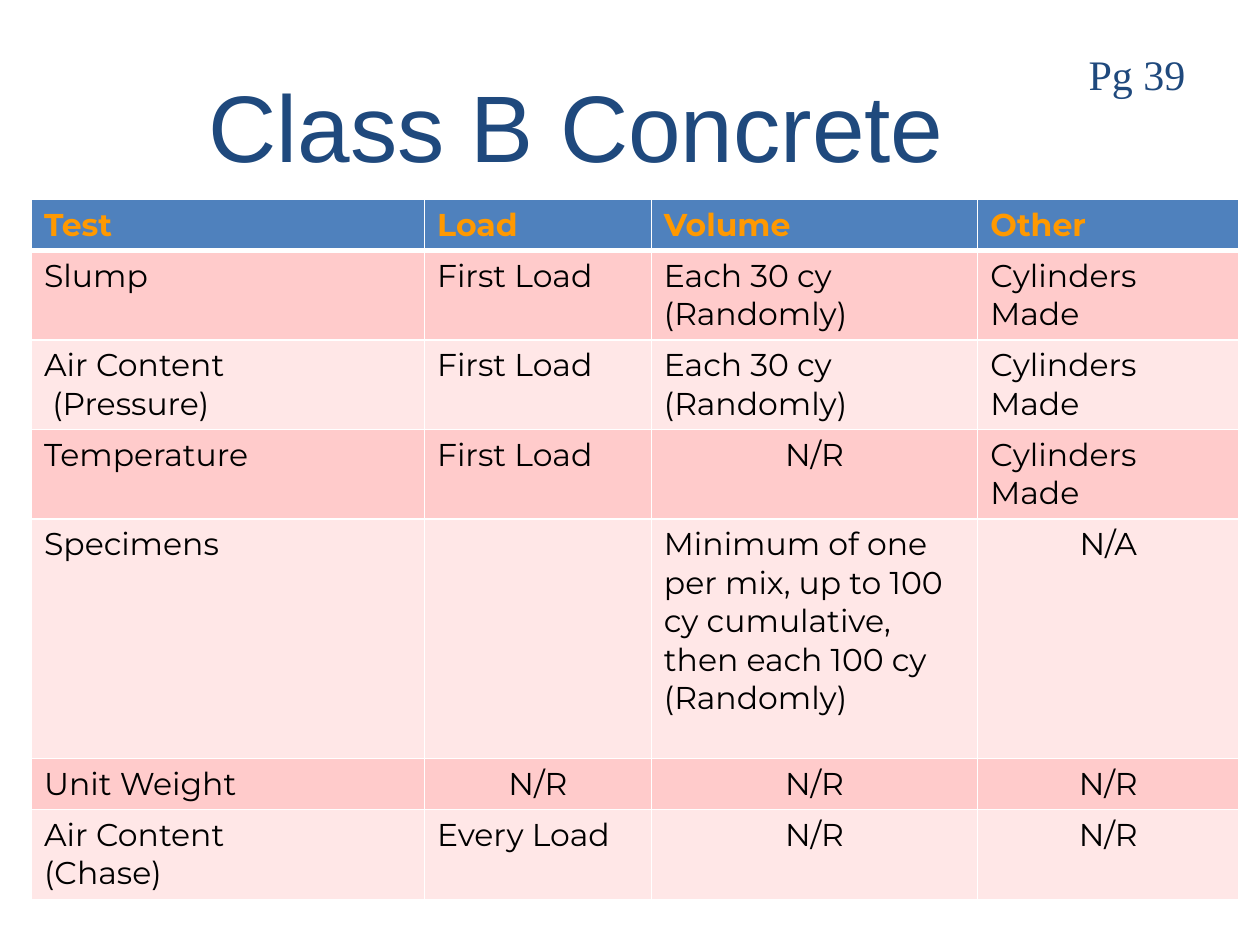
from dataclasses import dataclass

from lxml import etree
from pptx import Presentation
from pptx.dml.color import RGBColor
from pptx.enum.text import MSO_ANCHOR, MSO_AUTO_SIZE, PP_ALIGN
from pptx.oxml.ns import qn
from pptx.util import Pt

LEFT, CENTER = PP_ALIGN.LEFT, PP_ALIGN.CENTER
MIDDLE = MSO_ANCHOR.MIDDLE
NO_FIT = MSO_AUTO_SIZE.NONE
TITLE_ONLY = 5


@dataclass(frozen=True)
class Theme:
    navy: str = "1F497D"
    blue: str = "4F81BD"
    orange: str = "FF9900"
    black: str = "000000"
    white: str = "FFFFFF"
    bands: tuple = ("FFCBCB", "FFE7E7")
    title: tuple = ("Arial", 54)
    page: tuple = ("Times New Roman", 24)
    cell: tuple = ("Montserrat", 18)


THEME = Theme()

COLS = (224.6, 129.6, 186.5, 149.3)
HEAD = ("Test", "Load", "Volume", "Other")
# Row height, then the four cell texts
ROWS = (
    (50.4, "Slump", "First Load", "Each 30 cy (Randomly)", "Cylinders Made"),
    (50.4, "Air Content\n (Pressure)", "First Load", "Each 30 cy (Randomly)",
     "Cylinders Made"),
    (50.4, "Temperature", "First Load", "N/R", "Cylinders Made"),
    (136.8, "Specimens", "",
     "Minimum of one per mix, up to 100 cy cumulative, "
     "then each 100 cy (Randomly)", "N/A"),
    (29.2, "Unit Weight", "N/R", "N/R", "N/R"),
    (50.4, "Air Content\n(Chase)", "Every Load", "N/R", "N/R"),
)
HEAD_H = 29.2


def write(frame, text, face, color, align=LEFT, bold=False):
    """Fill a text frame, one paragraph per line."""
    for i, line in enumerate(text.split("\n")):
        para = frame.paragraphs[0] if i == 0 else frame.add_paragraph()
        para.alignment = align
        if not line:
            continue
        run = para.add_run()
        run.text = line
        run.font.name, run.font.size = face[0], Pt(face[1])
        run.font.bold = bold
        run.font.color.rgb = RGBColor.from_string(color)


def edge(cell, side, width):
    """Add one white border; call before the cell's fill is set."""
    line = etree.SubElement(cell._tc.get_or_add_tcPr(), qn(f"a:ln{side}"),
                            w=str(Pt(width)))
    fill = etree.SubElement(line, qn("a:solidFill"))
    etree.SubElement(fill, qn("a:srgbClr"), val=THEME.white)


def style(cell, fill, top=1, base=1):
    for side, width in (("L", 1), ("R", 1), ("T", top), ("B", base)):
        edge(cell, side, width)
    cell.fill.solid()
    cell.fill.fore_color.rgb = RGBColor.from_string(fill)


def add_title(slide):
    box = slide.shapes.title
    box.left, box.top, box.width, box.height = map(Pt, (24, 30, 610.5, 83))
    box.text_frame.auto_size = NO_FIT
    box.text_frame.vertical_anchor = MIDDLE
    write(box.text_frame, "Class B Concrete", THEME.title, THEME.navy, CENTER)


def add_grid(slide):
    high = HEAD_H + sum(row[0] for row in ROWS)
    grid = slide.shapes.add_table(len(ROWS) + 1, len(COLS), Pt(18), Pt(114),
                                  Pt(sum(COLS)), Pt(high)).table
    grid.horz_banding = False
    for col, width in zip(grid.columns, COLS):
        col.width = Pt(width)

    # Header row
    grid.rows[0].height = Pt(HEAD_H)
    for cell, text in zip(grid.rows[0].cells, HEAD):
        style(cell, THEME.blue, base=3)
        write(cell.text_frame, text, THEME.cell, THEME.orange, bold=True)

    # Test rows in alternating bands
    for i, (height, *texts) in enumerate(ROWS):
        row = grid.rows[i + 1]
        row.height = Pt(height)
        for cell, text in zip(row.cells, texts):
            style(cell, THEME.bands[i % 2], top=3 if i == 0 else 1)
            align = CENTER if text in ("N/R", "N/A") else LEFT
            write(cell.text_frame, text, THEME.cell, THEME.black, align)


def add_page(slide):
    box = slide.shapes.add_textbox(Pt(615), Pt(24), Pt(102), Pt(36))
    box.text_frame.word_wrap = True
    write(box.text_frame, "Pg 39", THEME.page, THEME.navy)


def main():
    deck = Presentation()
    deck.slide_width, deck.slide_height = Pt(720), Pt(540)
    slide = deck.slides.add_slide(deck.slide_layouts[TITLE_ONLY])
    add_title(slide)
    add_grid(slide)
    add_page(slide)
    deck.save("out.pptx")


if __name__ == "__main__":
    main()
